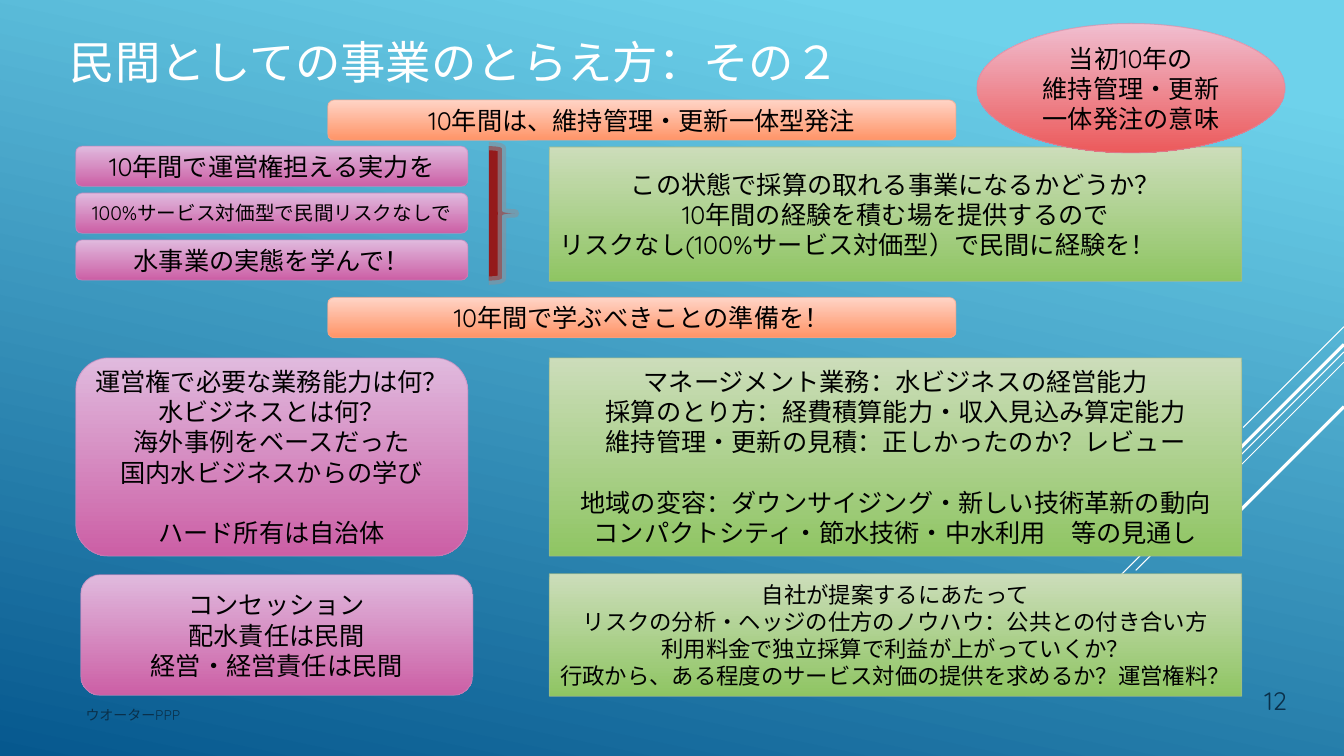
from dataclasses import dataclass
from typing import NamedTuple

from lxml.etree import SubElement
from pptx import Presentation
from pptx.dml.color import RGBColor
from pptx.dml.fill import FillFormat
from pptx.enum.shapes import MSO_CONNECTOR, MSO_SHAPE
from pptx.enum.text import MSO_ANCHOR, MSO_AUTO_SIZE, PP_ALIGN
from pptx.oxml.ns import qn
from pptx.shapes.autoshape import Shape
from pptx.slide import Slide
from pptx.text.text import TextFrame
from pptx.util import Inches, Length, Pt

COLUMNS, ROWS = 160, 90
SLIDE_WIDTH, SLIDE_HEIGHT = Inches(13.33), Inches(7.5)
FONT = "Quicksand"
COLORS = {
    "sky": "6ED2EB", "deep": "06588E", "white": "FFFFFF", "black": "000000",
    "navy": "0A304A", "brace": "941A1B", "brace_line": "89919C",
    "pink_top": "E0BADE", "pink_bottom": "CC5FA5", "pink_line": "C089BD",
    "green_top": "CCDDBA", "green_bottom": "8FC563", "green_line": "A4BB8B",
    "orange_top": "FFD4C6", "orange_bottom": "FF9467", "orange_line": "EEA78F",
    "red_top": "F0BED0", "red_bottom": "EC5A5B", "red_line": "D68BA6",
}


class Box(NamedTuple):
    """Left and width in grid columns, top and height in grid rows."""
    left: float
    top: float
    width: float
    height: float


class Line(NamedTuple):
    text: str
    align: PP_ALIGN = PP_ALIGN.CENTER
    space_before: float = 0


@dataclass
class Panel:
    preset: MSO_SHAPE
    palette: str
    box: Box
    lines: list[Line]
    size: float = 18


class Ray(NamedTuple):
    """A diagonal that runs down and left from the right edge."""
    row: float
    length: float
    weight: float


RAYS = [Ray(38.9, 12, 0.75), Ray(41.9, 39.1, 0.75), Ray(43.1, 24.8, 0.75),
        Ray(41, 22.9, 2.25), Ray(48.4, 16.7, 2.25)]

ROUND, RECTANGLE = MSO_SHAPE.ROUNDED_RECTANGLE, MSO_SHAPE.RECTANGLE
LEFT_X, LEFT_WIDTH = 9, 46.7
RIGHT_X, RIGHT_WIDTH = 65.4, 82.4
BAR_HEIGHT, BAR_TOP, BAR_PITCH = 4.8, 17.4, 5.58
BLANK_LINE = 21.6

GOALS = [("10年間で運営権担える実力を", 18),
         ("100%サービス対価型で民間リスクなしで", 14),
         ("水事業の実態を学んで！", 18)]
HEADINGS = [("10年間は、維持管理・更新一体型発注", 11.9),
            ("10年間で学ぶべきことの準備を！", 35.4)]

PANELS = [
    *(Panel(ROUND, "pink", Box(LEFT_X, BAR_TOP + i * BAR_PITCH, LEFT_WIDTH, BAR_HEIGHT),
            [Line(text)], size) for i, (text, size) in enumerate(GOALS)),
    Panel(RECTANGLE, "green", Box(RIGHT_X, 17.5, RIGHT_WIDTH, 16), [
        Line("この状態で採算の取れる事業になるかどうか？"),
        Line("10年間の経験を積む場を提供するので"),
        Line("リスクなし(100%サービス対価型）で民間に経験を！", PP_ALIGN.LEFT)]),
    *(Panel(ROUND, "orange", Box(39, top, 74.8, BAR_HEIGHT), [Line(text)])
      for text, top in HEADINGS),
    Panel(ROUND, "pink", Box(LEFT_X, 42.6, LEFT_WIDTH, 23.6), [
        Line("運営権で必要な業務能力は何？"),
        Line("水ビジネスとは何？"),
        Line("海外事例をベースだった"),
        Line("国内水ビジネスからの学び"),
        Line("ハード所有は自治体", space_before=BLANK_LINE)]),
    Panel(RECTANGLE, "green", Box(RIGHT_X, 42.6, RIGHT_WIDTH, 23.6), [
        Line("マネージメント業務：水ビジネスの経営能力"),
        Line("採算のとり方：経費積算能力・収入見込み算定能力"),
        Line("維持管理・更新の見積：正しかったのか？レビュー"),
        Line("地域の変容：ダウンサイジング・新しい技術革新の動向", space_before=BLANK_LINE),
        Line("コンパクトシティ・節水技術・中水利用　等の見通し")]),
    Panel(ROUND, "pink", Box(9.6, 68.4, LEFT_WIDTH, 14.4), [
        Line("コンセッション"),
        Line("配水責任は民間"),
        Line("経営・経営責任は民間")]),
    Panel(RECTANGLE, "green", Box(RIGHT_X, 68.3, RIGHT_WIDTH, 14.6), [
        Line("自社が提案するにあたって"),
        Line("リスクの分析・ヘッジの仕方のノウハウ：公共との付き合い方"),
        Line("利用料金で独立採算で利益が上がっていくか？"),
        Line("行政から、ある程度のサービス対価の提供を求めるか？運営権料？")], 16),
    Panel(MSO_SHAPE.OVAL, "red", Box(116.3, 2.8, 36.7, 15.4), [
        Line("当初10年の"),
        Line("維持管理・更新"),
        Line("一体発注の意味")]),
]


def x(columns: float) -> Length:
    return Length(round(SLIDE_WIDTH * columns / COLUMNS))


def y(rows: float) -> Length:
    return Length(round(SLIDE_HEIGHT * rows / ROWS))


def place(box: Box) -> tuple[Length, Length, Length, Length]:
    return x(box.left), y(box.top), x(box.width), y(box.height)


def rgb(name: str) -> RGBColor:
    return RGBColor.from_string(COLORS[name])


def fill_gradient(fill: FillFormat, first: str, last: str, angle: float,
                  start: float = 0) -> None:
    fill.gradient()
    fill.gradient_angle = angle
    for stop, name, position in zip(fill.gradient_stops, (first, last), (start, 1)):
        stop.color.rgb = rgb(name)
        stop.position = position


def outline(shape: Shape, color: str, weight: float) -> None:
    """Give the shape a line of 60% opacity and no shadow."""
    shape.shadow.inherit = False
    shape.line.color.rgb = rgb(color)
    shape.line.width = Pt(weight)
    line_color = shape.element.spPr.find(qn("a:ln")).find(".//" + qn("a:srgbClr"))
    SubElement(line_color, qn("a:alpha")).set("val", "60000")


def write(frame: TextFrame, lines: list[Line], size: float, color: str,
          anchor: MSO_ANCHOR) -> None:
    frame.word_wrap = True
    frame.auto_size = MSO_AUTO_SIZE.NONE
    frame.vertical_anchor = anchor
    for i, line in enumerate(lines):
        paragraph = frame.add_paragraph() if i else frame.paragraphs[0]
        paragraph.text = line.text
        paragraph.alignment = line.align
        paragraph.space_before = Pt(line.space_before)
        paragraph.font.name = FONT
        paragraph.font.size = Pt(size)
        paragraph.font.color.rgb = rgb(color)


def add_ray(slide: Slide, ray: Ray) -> None:
    connector = slide.shapes.add_connector(
        MSO_CONNECTOR.STRAIGHT, x(COLUMNS), y(ray.row),
        x(COLUMNS - ray.length), y(ray.row + ray.length))
    connector.line.color.rgb = rgb("white")
    connector.line.width = Pt(ray.weight)
    SubElement(connector.element.spPr, qn("a:effectLst"))


def add_panel(slide: Slide, panel: Panel) -> None:
    shape = slide.shapes.add_shape(panel.preset, *place(panel.box))
    fill_gradient(shape.fill, f"{panel.palette}_top", f"{panel.palette}_bottom", 270)
    outline(shape, f"{panel.palette}_line", 0.75)
    write(shape.text_frame, panel.lines, panel.size, "black", MSO_ANCHOR.MIDDLE)


def add_label(slide: Slide, box: Box, line: Line, size: float, anchor: MSO_ANCHOR) -> None:
    label = slide.shapes.add_textbox(*place(box))
    write(label.text_frame, [line], size, "navy", anchor)


def main() -> None:
    presentation = Presentation()
    presentation.slide_width, presentation.slide_height = SLIDE_WIDTH, SLIDE_HEIGHT
    slide = presentation.slides.add_slide(presentation.slide_layouts.get_by_name("Title Only"))
    fill_gradient(slide.background.fill, "sky", "deep", 258, 0.1)
    for ray in RAYS:
        add_ray(slide, ray)

    title = slide.shapes.title
    title.left, title.top, title.width, title.height = place(Box(7.1, 4.2, 112, 6.1))
    write(title.text_frame, [Line("民間としての事業のとらえ方：その２", PP_ALIGN.LEFT)],
          32.4, "white", MSO_ANCHOR.MIDDLE)
    add_label(slide, Box(9, 83.5, 99, 4.8), Line("ウオーターPPP", PP_ALIGN.LEFT),
              10, MSO_ANCHOR.TOP)
    add_label(slide, Box(139.4, 77, 15, 8.8), Line("12", PP_ALIGN.RIGHT),
              18, MSO_ANCHOR.BOTTOM)

    brace = slide.shapes.add_shape(MSO_SHAPE.RIGHT_BRACE, *place(Box(58.2, BAR_TOP, 3.1, 16)))
    brace.fill.solid()
    brace.fill.fore_color.rgb = rgb("brace")
    outline(brace, "brace_line", 6)
    for panel in PANELS:
        add_panel(slide, panel)
    presentation.save("out.pptx")


if __name__ == "__main__":
    main()
